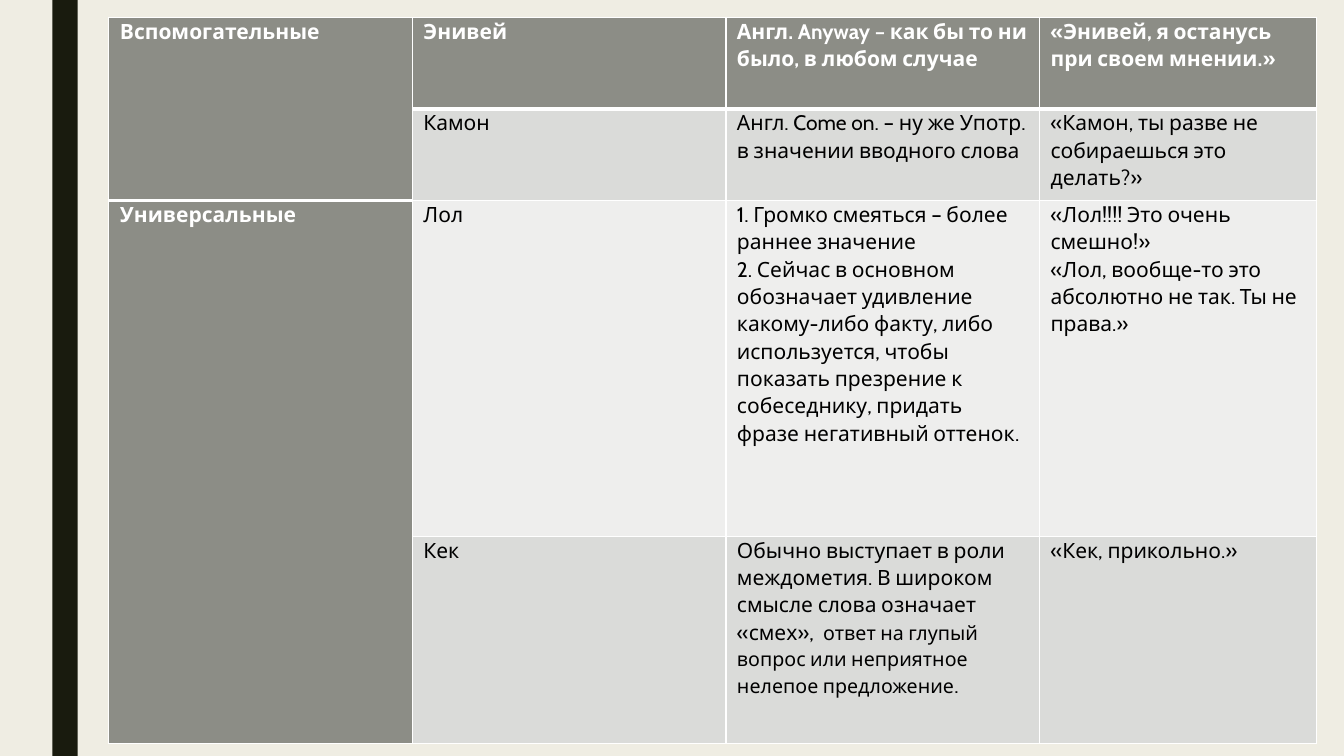
"""Build a slide with a table of slang words, their meanings and examples."""
from dataclasses import dataclass

from lxml import etree
from pptx import Presentation
from pptx.dml.color import RGBColor
from pptx.enum.shapes import MSO_SHAPE
from pptx.oxml.ns import qn
from pptx.util import Inches, Pt

RECTANGLE = MSO_SHAPE.RECTANGLE
BACKGROUND = RGBColor(0xEF, 0xED, 0xE3)
BAR = RGBColor(0x19, 0x1B, 0x0E)
HEADER = RGBColor(0x8C, 0x8D, 0x86)
DARK_BAND = RGBColor(0xDA, 0xDB, 0xD9)
LIGHT_BAND = RGBColor(0xEE, 0xEE, 0xED)
WHITE = RGBColor(0xFF, 0xFF, 0xFF)
BLACK = RGBColor(0, 0, 0)

FONT = "Cabin"
TEXT_SIZE = 15
SMALL_SIZE = 14
LINE_SPACING = 1.07
THIN, THICK = 1, 3
COLUMN_WIDTHS = (3.01, 3.11, 3.11, 2.75)
GROUP_ROWS = 2


@dataclass(frozen=True)
class Run:
    text: str
    size: int = TEXT_SIZE


@dataclass(frozen=True)
class Row:
    height: float
    fill: RGBColor
    cells: tuple[list[list[Run]], ...]


def plain(*lines: str) -> list[list[Run]]:
    """Return one single-run paragraph per line."""
    return [[Run(line)] for line in lines]


ROWS = (
    Row(0.91, HEADER, (
        plain("Вспомогательные"),
        plain("Энивей"),
        plain("Англ. Anyway – как бы то ни было, в любом случае"),
        plain("«Энивей, я останусь при своем мнении.»"),
    )),
    Row(0.91, DARK_BAND, (
        [],
        plain("Камон"),
        plain("Англ. Come on. – ну же Употр. в значении вводного слова"),
        plain("«Камон, ты разве не собираешься это делать?»"),
    )),
    Row(3.33, LIGHT_BAND, (
        plain("Универсальные"),
        plain("Лол"),
        plain("1. Громко смеяться – более раннее значение",
              "2. Сейчас в основном обозначает удивление какому-либо факту, "
              "либо используется, чтобы показать презрение к собеседнику, "
              "придать фразе негативный оттенок."),
        plain("«Лол!!!! Это очень смешно!»",
              "«Лол, вообще-то это абсолютно не так. Ты не права.»"),
    )),
    Row(2.06, DARK_BAND, (
        [],
        plain("Кек"),
        [[Run("Обычно выступает в роли междометия. В широком смысле слова "
              "означает «смех», "),
          Run(" ответ на глупый вопрос или неприятное нелепое предложение",
              SMALL_SIZE),
          Run(".")]],
        plain("«Кек, прикольно.»"),
    )),
)


def write_paragraphs(tf, paragraphs: list[list[Run]], bold: bool) -> None:
    """Fill a text frame with formatted runs."""
    for i, runs in enumerate(paragraphs):
        p = tf.paragraphs[0] if i == 0 else tf.add_paragraph()
        p.line_spacing = LINE_SPACING
        for run in runs:
            r = p.add_run()
            r.text = run.text
            font_format = {"name": FONT, "size": Pt(run.size), "bold": bold}
            for name, value in font_format.items():
                setattr(r.font, name, value)
            r.font.color.rgb = WHITE if bold else BLACK


def set_borders(cell, bottom: int) -> None:
    """Draw white borders round a cell, with a given bottom width."""
    tc_pr = cell._tc.get_or_add_tcPr()
    widths = {"a:lnL": THIN, "a:lnR": THIN, "a:lnT": THIN, "a:lnB": bottom}
    for i, (tag, width) in enumerate(widths.items()):
        ln = etree.Element(qn(tag), w=str(Pt(width)))
        fill = etree.SubElement(ln, qn("a:solidFill"))
        etree.SubElement(fill, qn("a:srgbClr"), val=str(WHITE))
        tc_pr.insert(i, ln)


def add_bar(s) -> None:
    """Add the dark vertical bar at the left."""
    sp = s.shapes.add_shape(RECTANGLE, Inches(0.52), 0, Inches(0.25), Inches(7.5))
    sp.shadow.inherit = False
    sp.fill.solid()
    sp.fill.fore_color.rgb = BAR
    sp.line.fill.background()


def add_word_table(s) -> None:
    """Add the table of words."""
    table = s.shapes.add_table(
        len(ROWS), len(COLUMN_WIDTHS), Inches(1.08), Inches(0.17),
        Inches(sum(COLUMN_WIDTHS)), Inches(sum(row.height for row in ROWS)),
    ).table
    for column, width in zip(table.columns, COLUMN_WIDTHS):
        column.width = Inches(width)
    cell_format = {"margin_left": Inches(0.11), "margin_right": Inches(0.11),
                   "margin_top": 0, "margin_bottom": 0}
    for i, row in enumerate(ROWS):
        table.rows[i].height = Inches(row.height)
        for j, paragraphs in enumerate(row.cells):
            cell = table.cell(i, j)
            for name, value in cell_format.items():
                setattr(cell, name, value)
            is_header = i == 0 or j == 0
            cell.fill.solid()
            cell.fill.fore_color.rgb = HEADER if is_header else row.fill
            is_thick = i == 0 or (j == 0 and i < GROUP_ROWS)
            set_borders(cell, THICK if is_thick else THIN)
            write_paragraphs(cell.text_frame, paragraphs, is_header)
    for top in range(0, len(ROWS), GROUP_ROWS):
        table.cell(top, 0).merge(table.cell(top + GROUP_ROWS - 1, 0))


def main() -> None:
    """Build and save the presentation."""
    prs = Presentation()
    prs.slide_width, prs.slide_height = Inches(13.33), Inches(7.5)
    s = prs.slides.add_slide(prs.slide_layouts[6])
    s.background.fill.solid()
    s.background.fill.fore_color.rgb = BACKGROUND
    add_bar(s)
    add_word_table(s)
    prs.save("out.pptx")


if __name__ == "__main__":
    main()
